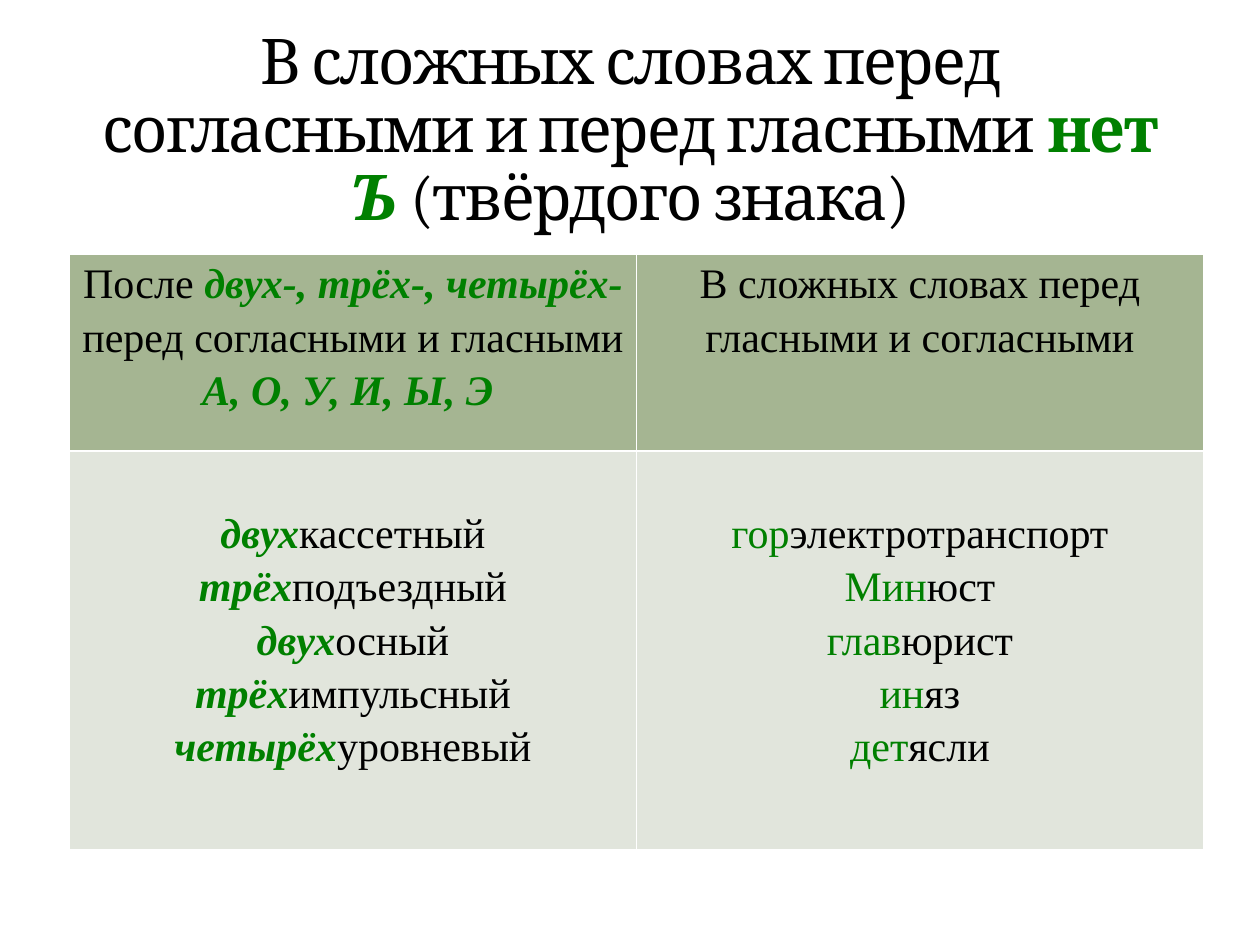
from pptx import Presentation
from pptx.dml.color import RGBColor
from pptx.enum.text import MSO_ANCHOR, MSO_AUTO_SIZE, PP_ALIGN
from pptx.util import Cm, Pt

CENTER = PP_ALIGN.CENTER
BOTTOM = MSO_ANCHOR.BOTTOM
NO_AUTOFIT = MSO_AUTO_SIZE.NONE

BLACK = RGBColor(0x00, 0x00, 0x00)
GREEN = RGBColor(0x00, 0x80, 0x00)
HEADER_FILL = RGBColor(0xA5, 0xB5, 0x92)
BODY_FILL = RGBColor(0xE1, 0xE5, 0xDC)

# Text styles: colour, bold, italic
PLAIN = (BLACK, False, False)
ACCENT = (GREEN, False, False)
STRONG = (GREEN, True, False)
PREFIX = (GREEN, True, True)

# Content: each paragraph is a list of (text, style)
TITLE = [
    ("В сложных словах перед согласными и перед гласными ", PLAIN),
    ("нет ", STRONG),
    ("Ъ", PREFIX),
    (" (твёрдого знака)", PLAIN),
]
HEADERS = [
    [
        [("После ", PLAIN), ("двух-, трёх-, четырёх- ", PREFIX)],
        [("перед согласными и гласными ", PLAIN), ("А, О, У, И, Ы, Э ", PREFIX)],
    ],
    [[("В сложных словах перед гласными и согласными", PLAIN)]],
]
NUMERAL_WORDS = [
    ("двух", "кассетный"),
    ("трёх", "подъездный"),
    ("двух", "осный"),
    ("трёх", "импульсный"),
    ("четырёх", "уровневый"),
]
COMPOUND_WORDS = [
    ("гор", "электротранспорт"),
    ("Мин", "юст"),
    ("глав", "юрист"),
    ("ин", "яз"),
    ("дет", "ясли"),
]


def split_words(words, prefix_style):
    return [[(prefix, prefix_style), (stem, PLAIN)] for prefix, stem in words]


EXAMPLES = [split_words(NUMERAL_WORDS, PREFIX), split_words(COMPOUND_WORDS, ACCENT)]

# Table rows: height, fill, top margin, cells
ROWS = [
    (Cm(3.96), HEADER_FILL, Cm(0), HEADERS),
    (Cm(8.03), BODY_FILL, Cm(1.07), EXAMPLES),
]
COLUMN_WIDTH = Cm(11.43)
SIDE_MARGIN = Cm(0.18)


def write_paragraph(paragraph, pieces, font_name, size, line_spacing):
    paragraph.alignment = CENTER
    paragraph.line_spacing = line_spacing
    for text, (color, bold, italic) in pieces:
        run = paragraph.add_run()
        run.text = text
        run.font.name = font_name
        run.font.size = size
        run.font.bold = bold
        run.font.italic = italic
        run.font.color.rgb = color


def fill_cell(cell, paragraphs, fill, top_margin):
    cell.fill.solid()
    cell.fill.fore_color.rgb = fill
    cell.margin_left = cell.margin_right = SIDE_MARGIN
    cell.margin_top, cell.margin_bottom = top_margin, 0
    frame = cell.text_frame
    for index, pieces in enumerate(paragraphs):
        paragraph = frame.add_paragraph() if index else frame.paragraphs[0]
        write_paragraph(paragraph, pieces, "Times New Roman", Pt(24), 1.15)


def add_title(slide):
    title = slide.shapes.title
    title.left, title.top = Cm(1.27), Cm(0.43)
    title.width, title.height = Cm(22.86), Cm(4.29)
    frame = title.text_frame
    frame.auto_size = NO_AUTOFIT
    frame.vertical_anchor = BOTTOM
    frame.margin_bottom = 0
    write_paragraph(frame.paragraphs[0], TITLE, "Cambria", Pt(36), 0.9)
    # Letters set 1 pt closer
    for run in frame.paragraphs[0].runs:
        run._r.get_or_add_rPr().set("spc", "-100")


def add_rule_table(slide):
    columns = len(HEADERS)
    height = sum(row[0] for row in ROWS)
    table = slide.shapes.add_table(
        len(ROWS), columns, Cm(1.4), Cm(5.13), COLUMN_WIDTH * columns, height
    ).table
    for column in table.columns:
        column.width = COLUMN_WIDTH
    for r, (row_height, fill, top_margin, cells) in enumerate(ROWS):
        table.rows[r].height = row_height
        for c, paragraphs in enumerate(cells):
            fill_cell(table.cell(r, c), paragraphs, fill, top_margin)


def main():
    presentation = Presentation()
    presentation.slide_width, presentation.slide_height = Cm(25.4), Cm(19.05)
    slide = presentation.slides.add_slide(
        presentation.slide_layouts.get_by_name("Title Only")
    )
    add_title(slide)
    add_rule_table(slide)
    presentation.save("out.pptx")


if __name__ == "__main__":
    main()
